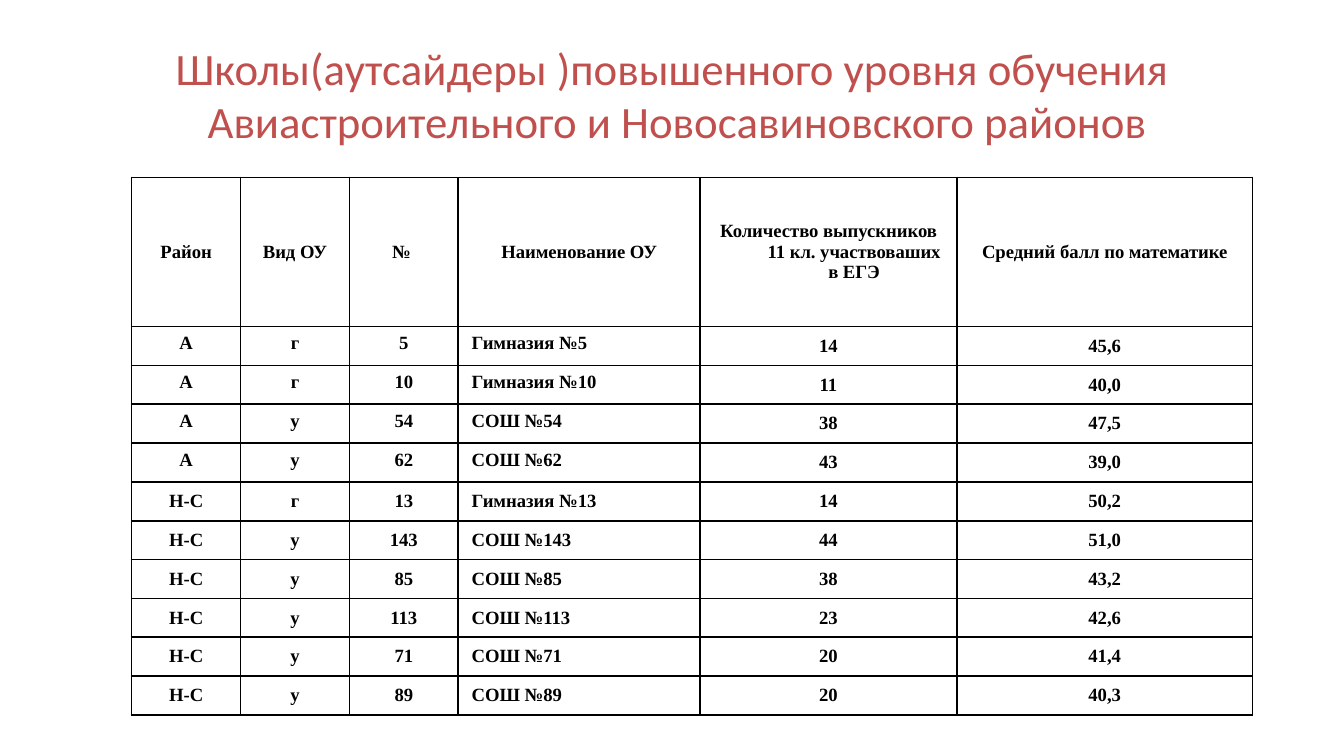
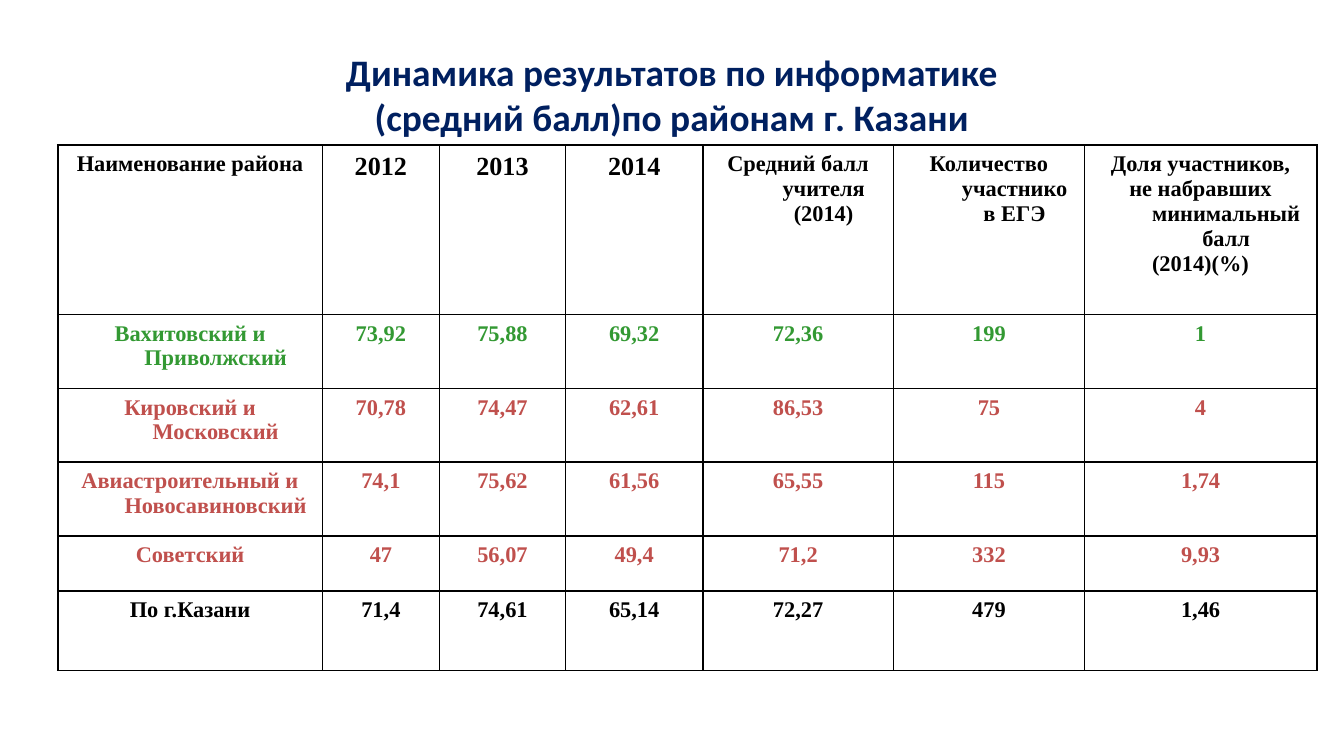
from lxml import etree
from pptx import Presentation
from pptx import util as u
from pptx.dml.color import RGBColor
from pptx.enum import text
from pptx.oxml import ns

COLORS = {"black": "000000", "red": "C0504D", "green": "339933",
          "navy": "002060", "white": "FFFFFF"}
TITLE_FONT = "Calibri"
TABLE_FONT = "Times New Roman"
TITLE_BOX = (0.5, 0.23, 9, 0.94)
HANGING = 0.38
TOP, MIDDLE = text.MSO_ANCHOR.TOP, text.MSO_ANCHOR.MIDDLE
LEFT, CENTER = text.PP_ALIGN.LEFT, text.PP_ALIGN.CENTER

SCHOOL_HEADER = ["Район", "Вид ОУ", "№ ", "Наименование ОУ",
                 "Количество выпускников 11 кл. участвоваших в ЕГЭ",
                 "Средний балл по математике"]
SCHOOLS = [
    ("А", "г", "5", "14", "45,6"),
    ("А", "г", "10", "11", "40,0"),
    ("А", "у", "54", "38", "47,5"),
    ("А", "у", "62", "43", "39,0"),
    ("Н-С", "г", "13", "14", "50,2"),
    ("Н-С", "у", "143", "44", "51,0"),
    ("Н-С", "у", "85", "38", "43,2"),
    ("Н-С", "у", "113", "23", "42,6"),
    ("Н-С", "у", "71", "20", "41,4"),
    ("Н-С", "у", "89", "20", "40,3"),
]
SCHOOL_KINDS = {"г": "Гимназия", "у": "СОШ"}

DISTRICT_HEADER = ["Наименование района", "2012", "2013", "2014",
                   "Средний балл учителя (2014)", "Количество участников ЕГЭ",
                   "Доля участников,\nне набравших минимальный балл\n(2014)(%)"]
DISTRICTS = [
    ("green", ["Вахитовский и Приволжский", "73,92", "75,88", "69,32", "72,36", "199", "1"]),
    ("red", ["Кировский и Московский", "70,78", "74,47", "62,61", "86,53", "75", "4"]),
    ("red", ["Авиастроительный и Новосавиновский",
             "74,1", "75,62", "61,56", "65,55", "115", "1,74"]),
    ("red", ["Советский", "47", "56,07", "49,4", "71,2", "332", "9,93"]),
    ("black", ["По г.Казани", "71,4", "74,61", "65,14", "72,27", "479", "1,46"]),
]


def format_font(font, color, **values):
    for name, value in values.items():
        setattr(font, name, value)
    font.color.rgb = RGBColor.from_string(COLORS[color])


def paint(fill, color):
    fill.solid()
    fill.fore_color.rgb = RGBColor.from_string(COLORS[color])


def add_slide(presentation):
    slide = presentation.slides.add_slide(presentation.slide_layouts[6])
    paint(slide.background.fill, "white")
    return slide


def add_title(slide, title, color, size, bold=False):
    """Write the title; a vertical tab in it is a line break."""
    frame = slide.shapes.add_textbox(*map(u.Inches, TITLE_BOX)).text_frame
    frame.word_wrap = True
    frame.vertical_anchor = MIDDLE
    paragraph = frame.paragraphs[0]
    paragraph.text = title
    paragraph.alignment = CENTER
    for run in paragraph.runs:
        format_font(run.font, color, name=TITLE_FONT, size=u.Pt(size), bold=bold)


def add_borders(cell):
    properties = cell._tc.get_or_add_tcPr()
    for position, side in enumerate(("lnL", "lnR", "lnT", "lnB")):
        line = etree.Element(ns.qn(f"a:{side}"), w=str(u.Pt(1)))
        fill = etree.SubElement(line, ns.qn("a:solidFill"))
        etree.SubElement(fill, ns.qn("a:srgbClr"), val=COLORS["black"])
        properties.insert(position, line)


def fill_cell(cell, content, size, color="black", align=CENTER, anchor=TOP):
    cell.text = content
    cell.vertical_anchor = anchor
    cell.fill.background()
    add_borders(cell)
    for paragraph in cell.text_frame.paragraphs:
        paragraph.alignment = align
        indents = paragraph._p.get_or_add_pPr()
        indents.set("marL", str(u.Inches(HANGING)))
        indents.set("indent", str(-u.Inches(HANGING)))
        for run in paragraph.runs:
            format_font(run.font, color, name=TABLE_FONT, size=u.Pt(size), bold=True)


def add_grid(slide, left, top, widths, heights):
    """Add an unstyled table with the given column widths and row heights."""
    frame = slide.shapes.add_table(
        len(heights), len(widths), u.Inches(left), u.Inches(top),
        u.Inches(sum(widths)), u.Inches(sum(heights)))
    table = frame.table
    table.first_row = table.horz_banding = False
    for column, width in zip(table.columns, widths):
        column.width = u.Inches(width)
    for row, height in zip(table.rows, heights):
        row.height = u.Inches(height)
    return table


def add_school_table(slide):
    header_height, total_height = 1.11, 4
    row_height = (total_height - header_height) / len(SCHOOLS)
    table = add_grid(slide, 0.98, 1.32, [0.81] * 3 + [1.8, 1.91, 2.2],
                     [header_height] + [row_height] * len(SCHOOLS))
    for column, heading in enumerate(SCHOOL_HEADER):
        fill_cell(table.cell(0, column), heading, 10, anchor=MIDDLE)
    for row, (district, kind, number, graduates, score) in enumerate(SCHOOLS, 1):
        school = f"{SCHOOL_KINDS[kind]} №{number}"
        values = [district, kind, number, school, graduates, score]
        for column, value in enumerate(values):
            fill_cell(table.cell(row, column), value, 10,
                      align=LEFT if column == 3 else CENTER,
                      anchor=TOP if district == "А" and column < 4 else MIDDLE)
    paint(table.cell(1, 5).fill, "white")


def add_district_table(slide):
    table = add_grid(slide, 0.43, 1.08, [1.97, 0.87, 0.94, 1.02, 1.42, 1.42, 1.73],
                     [1.26, 0.55, 0.55, 0.55, 0.41, 0.59])
    for column, heading in enumerate(DISTRICT_HEADER):
        fill_cell(table.cell(0, column), heading, 14 if heading.isdigit() else 12)
    for row, (color, values) in enumerate(DISTRICTS, 1):
        for column, value in enumerate(values):
            fill_cell(table.cell(row, column), value, 12, color)


def main():
    presentation = Presentation()
    presentation.slide_width = u.Inches(10)
    presentation.slide_height = u.Inches(10 * 9 / 16)

    slide = add_slide(presentation)
    add_title(slide, "Школы(аутсайдеры )повышенного уровня обучения\v"
                     " Авиастроительного и Новосавиновского районов", "red", 24)
    add_school_table(slide)

    slide = add_slide(presentation)
    add_title(slide, "Динамика результатов по информатике\v"
                     "(средний балл)по районам г. Казани", "navy", 20, bold=True)
    add_district_table(slide)

    presentation.save("out.pptx")


if __name__ == "__main__":
    main()
